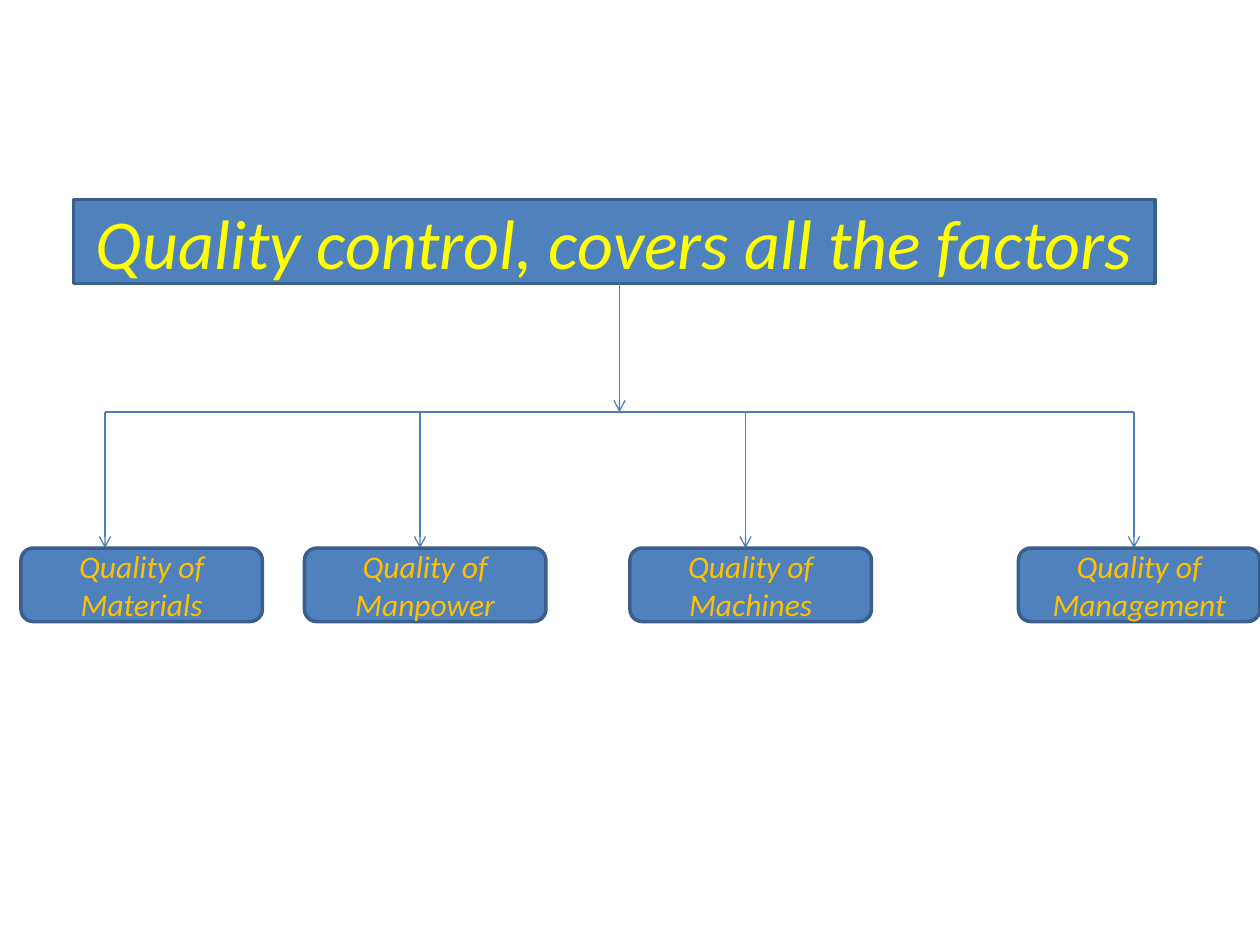
from typing import NamedTuple

from lxml.etree import SubElement
from pptx import Presentation
from pptx.dml.color import RGBColor
from pptx.enum.shapes import MSO_CONNECTOR, MSO_SHAPE
from pptx.enum.text import MSO_ANCHOR, PP_ALIGN
from pptx.oxml.ns import qn
from pptx.shapes.autoshape import Shape
from pptx.slide import Slide
from pptx.util import Pt

BOX_FILL = RGBColor(0x4F, 0x81, 0xBD)
BOX_OUTLINE = RGBColor(0x3A, 0x5F, 0x8C)
CONNECTOR_BLUE = RGBColor(0x4B, 0x7E, 0xBC)
TITLE_YELLOW = RGBColor(0xFF, 0xFF, 0x00)
FACTOR_ORANGE = RGBColor(0xFF, 0xC0, 0x00)

BRANCH_TOP = 235.5
FACTOR_TOP = 313.2
FACTOR_WIDTH = 138
FACTOR_HEIGHT = 42


class Factor(NamedTuple):
    text: str
    left: float
    arrow_x: float


FACTORS = [
    Factor("Quality of Materials", 12, 60),
    Factor("Quality of Manpower", 174, 240),
    Factor("Quality of Machines", 360, 426),
    Factor("Quality of Management", 582, 648),
]


def write_text(shape: Shape, text: str, *, size: float, color: RGBColor) -> None:
    frame = shape.text_frame
    frame.word_wrap = True
    frame.vertical_anchor = MSO_ANCHOR.MIDDLE
    paragraph = frame.paragraphs[0]
    paragraph.alignment = PP_ALIGN.CENTER
    run = paragraph.add_run()
    run.text = text
    run.font.name = "Calibri"
    run.font.size = Pt(size)
    run.font.italic = True
    run.font.color.rgb = color


def add_box(slide: Slide, kind: MSO_SHAPE, left: float, top: float,
            width: float, height: float) -> Shape:
    shape = slide.shapes.add_shape(kind, Pt(left), Pt(top), Pt(width), Pt(height))
    shape.shadow.inherit = False
    shape.fill.solid()
    shape.fill.fore_color.rgb = BOX_FILL
    shape.line.color.rgb = BOX_OUTLINE
    shape.line.width = Pt(2)
    return shape


def add_line(slide: Slide, start: tuple[float, float], end: tuple[float, float],
             arrow: bool = False) -> None:
    connector = slide.shapes.add_connector(
        MSO_CONNECTOR.STRAIGHT, *map(Pt, start), *map(Pt, end))
    connector.line.color.rgb = CONNECTOR_BLUE
    connector.line.width = Pt(0.75)
    if arrow:
        SubElement(connector.line._get_or_add_ln(), qn("a:tailEnd"), type="arrow")
    SubElement(connector._element.spPr, qn("a:effectLst"))


def add_factor(slide: Slide, factor: Factor) -> None:
    add_line(slide, (factor.arrow_x, BRANCH_TOP), (factor.arrow_x, FACTOR_TOP), arrow=True)
    box = add_box(slide, MSO_SHAPE.ROUNDED_RECTANGLE, factor.left, FACTOR_TOP,
                  FACTOR_WIDTH, FACTOR_HEIGHT)
    write_text(box, factor.text, size=18, color=FACTOR_ORANGE)


def main() -> None:
    presentation = Presentation()
    presentation.slide_width = Pt(720)
    presentation.slide_height = Pt(540)
    slide = presentation.slides.add_slide(presentation.slide_layouts[6])

    title = add_box(slide, MSO_SHAPE.FLOWCHART_PROCESS, 42, 114, 618, 48)
    write_text(title, "Quality control, covers all the factors", size=40, color=TITLE_YELLOW)

    add_line(slide, (354, 157), (354, BRANCH_TOP), arrow=True)
    add_line(slide, (FACTORS[0].arrow_x, BRANCH_TOP), (FACTORS[-1].arrow_x, BRANCH_TOP))
    for factor in FACTORS:
        add_factor(slide, factor)

    presentation.save("out.pptx")


if __name__ == "__main__":
    main()
